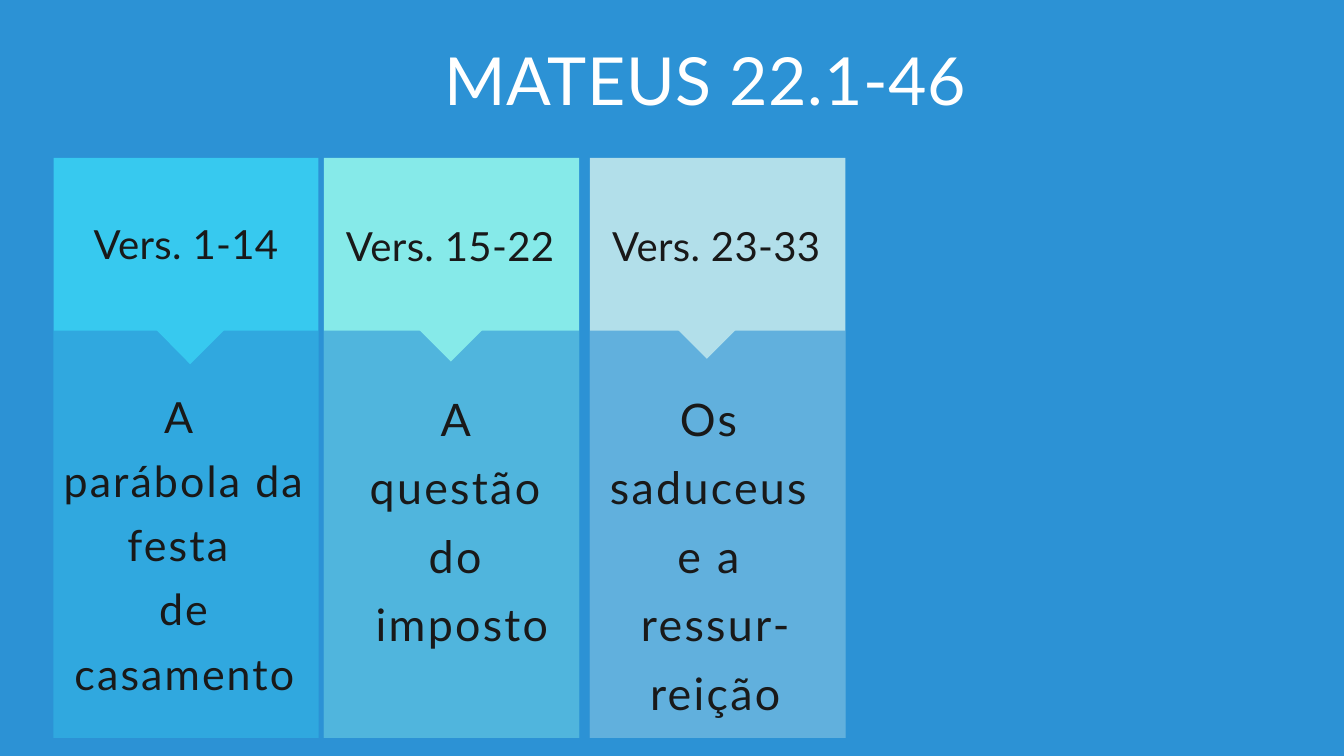
"""Builds the Mateus 22 slide with three verse columns."""
from collections import namedtuple

from lxml import etree
from pptx import Presentation
from pptx import util as u
from pptx.dml.color import RGBColor
from pptx.enum import shapes, text
from pptx.oxml import ns

PX = 9144
BLUE = RGBColor(0x2C, 0x92, 0xD5)
WHITE = RGBColor(0xFF, 0xFF, 0xFF)
INK = RGBColor(0x19, 0x19, 0x19)
CYAN = RGBColor(0x37, 0xC9, 0xEF)
MINT = RGBColor(0x86, 0xEA, 0xE9)
PALE = RGBColor(0xB2, 0xDF, 0xEA)

Box = namedtuple("Box", "left top width height")
Style = namedtuple("Style", "size leading spacing color")
Column = namedtuple("Column", "box color verses verses_box lines lines_box style pointer")

TITLE = Style(71, 94.3, 70, WHITE)
VERSES = Style(43, 56, 40, INK)
BODY = Style(48, 73.3, 250, INK)
BODY_SMALL = Style(46, 68.8, 230, INK)

COLUMNS = [
    Column(Box(80, 235, 394, 863), CYAN, "Vers. 1-14", Box(14, 85, 366, 79),
           ["A ", "parábola da festa ", "de casamento"], Box(0, 327, 389, 484),
           BODY_SMALL, [(272, 238), (203, 307), (138, 241)]),
    Column(Box(482, 235, 380, 863), MINT, "Vers. 15-22", Box(6, 88, 364, 79),
           ["A ", "questão ", "do ", "imposto"], Box(6, 326, 399, 410),
           BODY, [(269, 223), (189, 303), (127, 241)]),
    Column(Box(878, 235, 380, 863), PALE, "Vers. 23-33", Box(3, 88, 370, 79),
           ["Os ", "saduceus ", "e a ", "ressur-", "reição"], Box(-13, 326, 399, 512),
           BODY, [(248, 225), (174, 299), (115, 240)]),
]


def inside(outer, inner):
    """Return the inner box moved to the origin of the outer box."""
    return Box(outer.left + inner.left, outer.top + inner.top, inner.width, inner.height)


def paint(shape, color, opacity=100):
    """Give a shape a flat fill without line or shadow."""
    shape.shadow.inherit = False
    shape.line.fill.background()
    shape.fill.solid()
    shape.fill.fore_color.rgb = color
    if opacity < 100:
        tint = shape.fill._xPr.find(".//" + ns.qn("a:srgbClr"))
        etree.SubElement(tint, ns.qn("a:alpha"), val=str(opacity * 1000))


def add_panel(page, box, color, opacity=100):
    """Add a filled rectangle."""
    panel = page.shapes.add_shape(shapes.MSO_SHAPE.RECTANGLE, *(side * PX for side in box))
    paint(panel, color, opacity)


def add_label(page, box, lines, style):
    """Add centred text with one paragraph for each line."""
    frame = page.shapes.add_textbox(*(side * PX for side in box)).text_frame
    frame.word_wrap = True
    frame.auto_size = text.MSO_AUTO_SIZE.SHAPE_TO_FIT_TEXT
    frame.margin_left = frame.margin_top = frame.margin_right = frame.margin_bottom = 0
    for number, line in enumerate(lines):
        para = frame.add_paragraph() if number else frame.paragraphs[0]
        para.alignment = text.PP_ALIGN.CENTER
        para.line_spacing = u.Pt(style.leading)
        span = para.add_run()
        span.text = line
        span.font.name = "Lato"
        span.font.size = u.Pt(style.size)
        span.font.color.rgb = style.color
        span.font._element.set("spc", str(style.spacing))


def add_pointer(page, box, points, color):
    """Add the triangle that points from the verses to the subject."""
    corners = [(box.left + x, box.top + y) for x, y in points]
    builder = page.shapes.build_freeform(*corners[0], scale=PX)
    builder.add_line_segments(corners[1:], close=True)
    paint(builder.convert_to_shape(), color)


def add_column(page, column):
    """Add one column with its verses, pointer and subject."""
    box = column.box
    add_panel(page, box, column.color)
    add_panel(page, inside(box, Box(0, 257, box.width, 606)), BLUE, 60)
    add_pointer(page, box, column.pointer, column.color)
    add_label(page, inside(box, column.verses_box), [column.verses], VERSES)
    add_label(page, inside(box, column.lines_box), column.lines, column.style)


def main():
    """Build the deck and save it."""
    deck = Presentation()
    deck.slide_width, deck.slide_height = 2000 * PX, 1125 * PX
    page = deck.slides.add_slide(deck.slide_layouts[6])
    page.background.fill.solid()
    page.background.fill.fore_color.rgb = BLUE
    add_label(page, Box(558, 46, 984, 132), ["MATEUS 22.1-46"], TITLE)
    for column in COLUMNS:
        add_column(page, column)
    deck.save("out.pptx")


if __name__ == "__main__":
    main()
